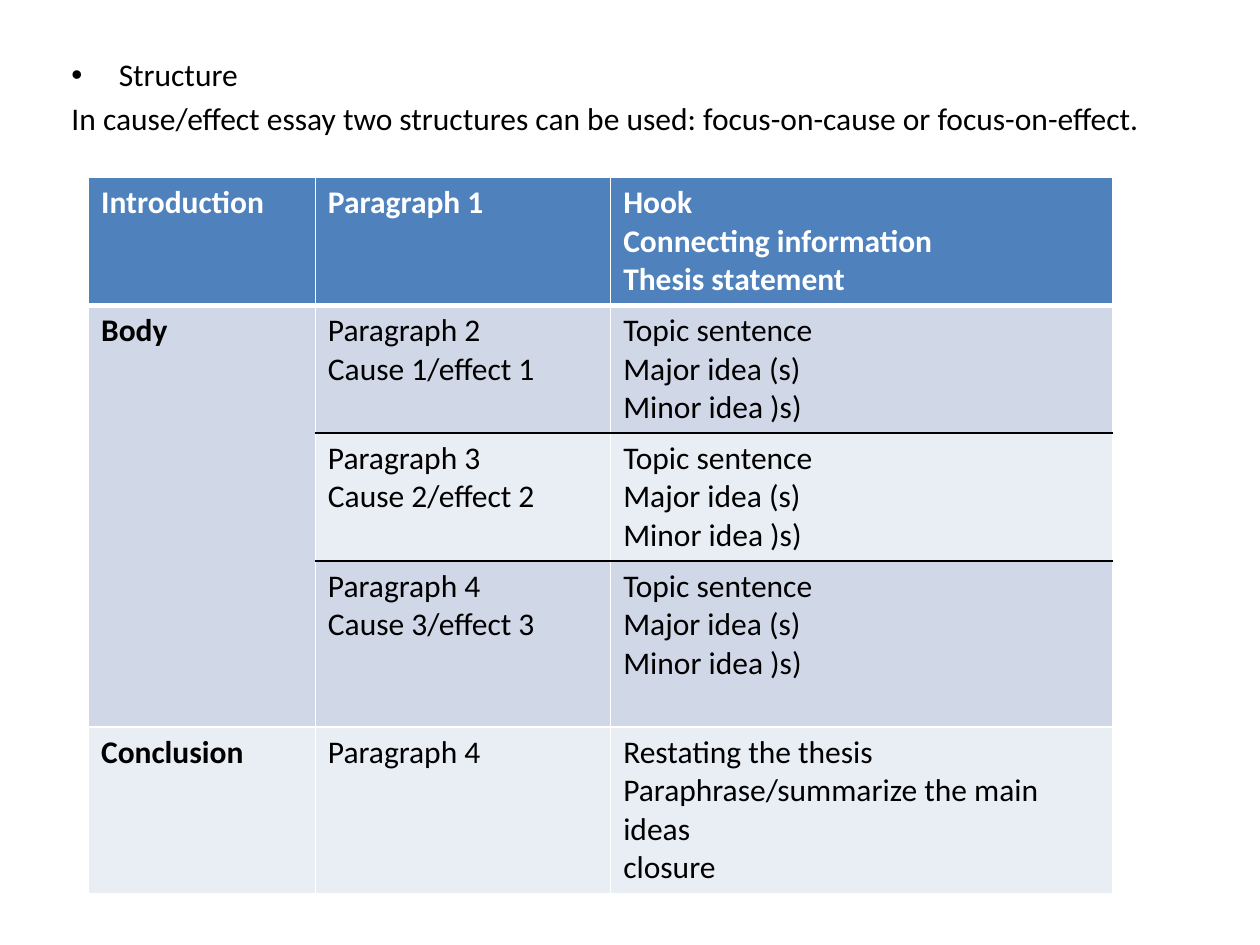
"""Build the cause/effect essay structure slide."""
from lxml import etree
from pptx import Presentation
from pptx.dml.color import RGBColor
from pptx.oxml import ns
from pptx.util import Pt

BLACK = RGBColor(0x00, 0x00, 0x00)
WHITE = RGBColor(0xFF, 0xFF, 0xFF)
BLUE = RGBColor(0x4F, 0x81, 0xBD)
BAND_DARK = RGBColor(0xD0, 0xD8, 0xE8)
BAND_LIGHT = RGBColor(0xE9, 0xED, 0xF4)

HEADING = "Structure"
INTRO = "In cause/effect essay two structures can be used: focus-on-cause or focus-on-effect."
IDEAS = ["Topic sentence", "Major idea (s)", "Minor idea )s)"]
ROWS = [
    (["Introduction"], ["Paragraph 1"], ["Hook", "Connecting information", "Thesis statement"]),
    (["Body"], ["Paragraph 2", "Cause 1/effect 1"], IDEAS),
    ([], ["Paragraph 3", "Cause 2/effect 2"], IDEAS),
    ([], ["Paragraph 4", "Cause 3/effect 3"], IDEAS),
    (["Conclusion"], ["Paragraph 4"],
     ["Restating the thesis", "Paraphrase/summarize the main ideas", "closure"]),
]
COLUMN_WIDTHS = [129.6, 168.8, 286.8]
ROW_HEIGHTS = [73, 73, 73, 95, 95]
BODY_FIRST, BODY_LAST = 1, 3


def style(para, color=BLACK, bold=False):
    para.font.name = "Calibri"
    para.font.size = Pt(18)
    para.font.bold = bold
    para.font.color.rgb = color


def add_border(cell, side, color, width):
    line = etree.SubElement(cell._tc.get_or_add_tcPr(), ns.qn(f"a:ln{side}"), w=str(Pt(width)))
    fill = etree.SubElement(line, ns.qn("a:solidFill"))
    etree.SubElement(fill, ns.qn("a:srgbClr"), val=str(color))


def horizontal_border(edge, column):
    if edge == 1:
        return WHITE, 3
    if column > 0 and BODY_FIRST < edge <= BODY_LAST:
        return BLACK, 1
    return WHITE, 1


def add_intro(page):
    box = page.shapes.add_textbox(Pt(33.8), Pt(28), Pt(648), Pt(60))
    frame = box.text_frame
    frame.word_wrap = True
    frame.text = f"{HEADING}\n{INTRO}"
    for para in frame.paragraphs:
        style(para)
        para.space_before = Pt(3.6)
        props = para._p.get_or_add_pPr()
        props.set("marL", str(Pt(27)))
        props.set("indent", str(-Pt(27)))
    bullet_props = frame.paragraphs[0]._p.get_or_add_pPr()
    spacing = bullet_props.find(ns.qn("a:spcBef"))
    font = etree.Element(ns.qn("a:buFont"), typeface="Arial")
    bullet = etree.Element(ns.qn("a:buChar"), char="•")
    spacing.addnext(font)
    font.addnext(bullet)


def add_structure_table(page):
    table = page.shapes.add_table(
        len(ROWS), len(COLUMN_WIDTHS), Pt(50.6), Pt(101.5),
        Pt(sum(COLUMN_WIDTHS)), Pt(sum(ROW_HEIGHTS))).table
    for column, width in zip(table.columns, COLUMN_WIDTHS):
        column.width = Pt(width)
    for row, height in zip(table.rows, ROW_HEIGHTS):
        row.height = Pt(height)
    table.cell(BODY_FIRST, 0).merge(table.cell(BODY_LAST, 0))
    for r, row in enumerate(ROWS):
        for c, lines in enumerate(row):
            cell = table.cell(r, c)
            add_border(cell, "L", WHITE, 1)
            add_border(cell, "R", WHITE, 1)
            add_border(cell, "T", *horizontal_border(r, c))
            add_border(cell, "B", *horizontal_border(r + 1, c))
            cell.fill.solid()
            band = BAND_DARK if r % 2 or cell.is_spanned else BAND_LIGHT
            cell.fill.fore_color.rgb = BLUE if r == 0 else band
            cell.text = "\n".join(lines)
            for para in cell.text_frame.paragraphs:
                style(para, WHITE if r == 0 else BLACK, r == 0 or c == 0)


def main():
    deck = Presentation()
    deck.slide_width, deck.slide_height = Pt(720), Pt(540)
    page = deck.slides.add_slide(deck.slide_layouts[6])
    add_intro(page)
    add_structure_table(page)
    deck.save("out.pptx")


if __name__ == "__main__":
    main()
